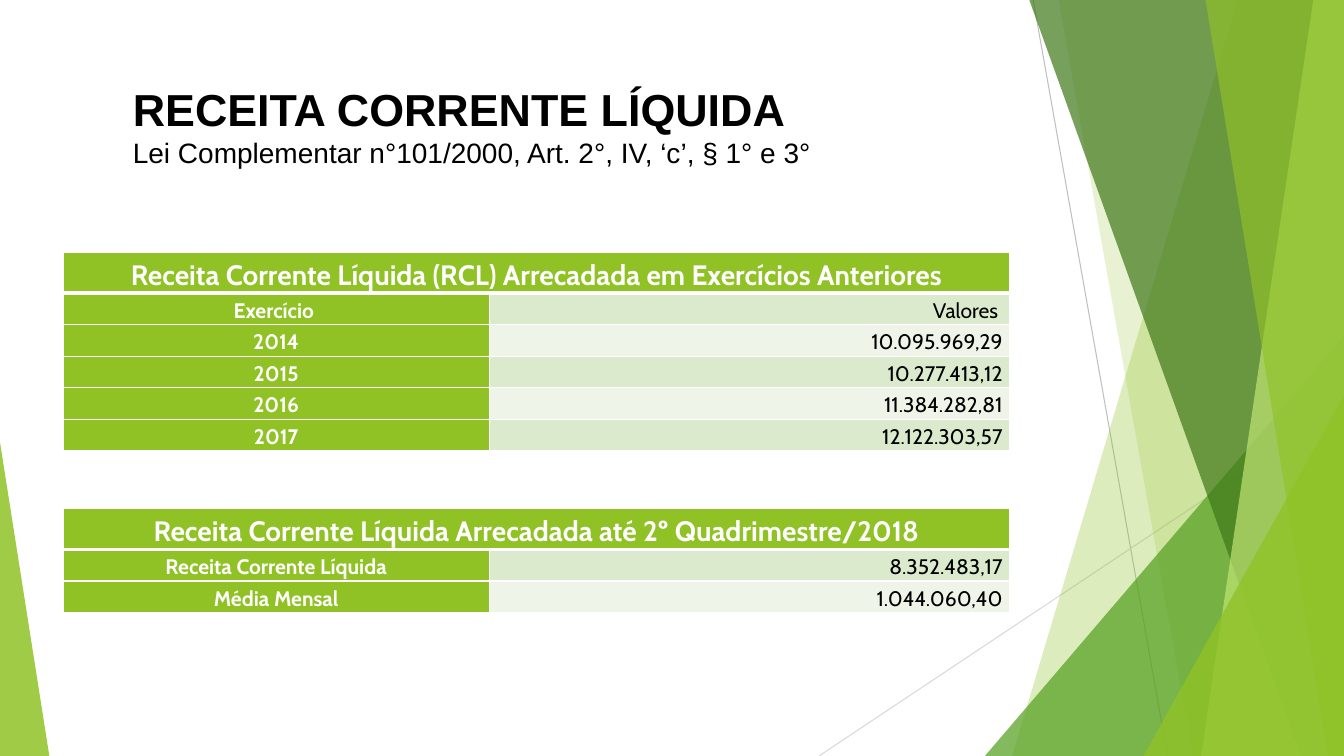
from lxml import etree
from pptx import Presentation
from pptx.dml.color import RGBColor
from pptx.enum.shapes import MSO_CONNECTOR as Connector, MSO_SHAPE as Shape
from pptx.enum.text import MSO_ANCHOR as Anchor, PP_ALIGN as Align
from pptx.oxml.ns import qn
from pptx.util import Pt

PX = 9525
WIDTH, HEIGHT = 1280, 720
GREEN, WHITE, BLACK = "90C226", "FFFFFF", "000000"
BANDS = ("DBE9CD", "EEF4E8")
COLUMNS = (406, 496)
HEADER_HEIGHT, ROW_HEIGHT = 39, 30

PAST_YEARS = [
    ("Exercício ", "Valores "),
    ("2014", "10.095.969,29"),
    ("2015", "10.277.413,12"),
    ("2016", "11.384.282,81"),
    ("2017", "12.122.303,57"),
]
CURRENT_YEAR = [
    ("Receita Corrente Líquida", "8.352.483,17"),
    ("Média Mensal", "1.044.060,40"),
]


def px(*lengths):
    return [length * PX for length in lengths]


def color(hex_code):
    return RGBColor.from_string(hex_code)


def paint(shape, hex_code, opacity):
    """Fill without outline or shadow; opacity is in percent."""
    shape.shadow.inherit = False
    shape.line.fill.background()
    shape.fill.solid()
    shape.fill.fore_color.rgb = color(hex_code)
    srgb = shape.fill._xPr.find(".//" + qn("a:srgbClr"))
    etree.SubElement(srgb, qn("a:alpha"), val=str(opacity * 1000))


def add_thin_line(slide, start, end, hex_code):
    line = slide.shapes.add_connector(Connector.STRAIGHT, *px(*start, *end))
    line.line.color.rgb = color(hex_code)
    line.line.width = Pt(0.75)
    etree.SubElement(line._element.spPr, qn("a:effectLst"))


def add_blade(slide, top_x, bottom_x, hex_code, opacity):
    """Slanted left edge, filled up to the right side of the slide."""
    builder = slide.shapes.build_freeform(top_x, -1, scale=PX)
    builder.add_line_segments([(WIDTH, -1), (WIDTH, HEIGHT), (bottom_x, HEIGHT)])
    paint(builder.convert_to_shape(), hex_code, opacity)


def add_corner(slide, left, top, width, apex, hex_code, opacity):
    """Triangle standing on the bottom edge of the slide."""
    corner = slide.shapes.add_shape(
        Shape.ISOSCELES_TRIANGLE, *px(left, top, width, HEIGHT - top))
    corner.adjustments[0] = apex
    paint(corner, hex_code, opacity)


def add_backdrop(slide):
    add_thin_line(slide, (984, 0), (1112, HEIGHT), "BFBFBF")
    add_thin_line(slide, (WIDTH, 387), (780, HEIGHT), "D9D9D9")
    add_blade(slide, 1179, 964, GREEN, 30)
    add_blade(slide, 1008, 1136, GREEN, 20)
    add_corner(slide, 938, 320, 342, 1, "54A021", 72)
    add_blade(slide, 980, 1239, "3F7819", 70)
    add_blade(slide, 1251, 1144, "C0E474", 70)
    add_blade(slide, 1148, 1265, GREEN, 65)
    add_corner(slide, 1089, 377, 191, 1, GREEN, 80)
    add_corner(slide, 0, 421, 47, 0, GREEN, 85)


def style_text(paragraph, font_name, size, hex_code, bold):
    for run in paragraph.runs:
        run.font.name = font_name
        run.font.size = Pt(size)
        run.font.color.rgb = color(hex_code)
        run.font.bold = bold


def add_heading(slide, left, top, width, height):
    frame = slide.shapes.add_textbox(*px(left, top, width, height)).text_frame
    frame.word_wrap = True
    frame.vertical_anchor = Anchor.MIDDLE
    frame.margin_bottom = 33 * PX
    frame.text = ("RECEITA CORRENTE LÍQUIDA\n"
                  "Lei Complementar n°101/2000, Art. 2°, IV, ‘c’, § 1° e 3°")
    title, law = frame.paragraphs
    style_text(title, "Arial", 32, BLACK, True)
    style_text(law, "Arial", 20, BLACK, False)


def border_cell(cell, top, bottom):
    """White borders; top and bottom widths are in points."""
    properties = cell._tc.get_or_add_tcPr()
    sides = (("L", 1), ("R", 1), ("T", top), ("B", bottom))
    for index, (side, width) in enumerate(sides):
        border = etree.Element(qn("a:ln" + side), w=str(Pt(width)))
        fill = etree.SubElement(border, qn("a:solidFill"))
        etree.SubElement(fill, qn("a:srgbClr"), val=WHITE)
        properties.insert(index, border)


def fill_cell(cell, text, fill, align, size, text_color, bold):
    cell.fill.solid()
    cell.fill.fore_color.rgb = color(fill)
    cell.vertical_anchor = Anchor.MIDDLE
    cell.margin_left = cell.margin_right = 7 * PX
    cell.margin_top = cell.margin_bottom = PX
    cell.text = text
    paragraph = cell.text_frame.paragraphs[0]
    paragraph.alignment = align
    paragraph.line_spacing = 1.15
    style_text(paragraph, "Cabin", size, text_color, bold)


def add_revenue_table(slide, left, top, heading, entries):
    height = HEADER_HEIGHT + ROW_HEIGHT * len(entries)
    table = slide.shapes.add_table(
        len(entries) + 1, 2, *px(left, top, sum(COLUMNS), height)).table
    for column, width in zip(table.columns, COLUMNS):
        column.width = width * PX
    for index, row in enumerate(table.rows):
        row.height = (ROW_HEIGHT if index else HEADER_HEIGHT) * PX
        for cell in row.cells:
            border_cell(cell, 3 if index == 1 else 1, 1 if index else 3)

    table.cell(0, 0).merge(table.cell(0, 1))
    fill_cell(table.cell(0, 0), heading, GREEN, Align.CENTER, 20, WHITE, True)
    for index, (label, value) in enumerate(entries):
        row = index + 1
        fill_cell(table.cell(row, 0), label, GREEN, Align.CENTER, 15, WHITE, True)
        fill_cell(table.cell(row, 1), value, BANDS[index % 2], Align.RIGHT,
                  15, BLACK, False)


def main():
    deck = Presentation()
    deck.slide_width, deck.slide_height = px(WIDTH, HEIGHT)
    slide = deck.slides.add_slide(deck.slide_layouts[6])
    add_backdrop(slide)
    add_revenue_table(
        slide, 60, 240,
        "Receita Corrente Líquida (RCL) Arrecadada em Exercícios Anteriores",
        PAST_YEARS)
    add_revenue_table(
        slide, 60, 484,
        "Receita Corrente Líquida Arrecadada até 2º Quadrimestre/2018",
        CURRENT_YEAR)
    add_heading(slide, 117, 72, 866, 123)
    deck.save("out.pptx")


if __name__ == "__main__":
    main()
